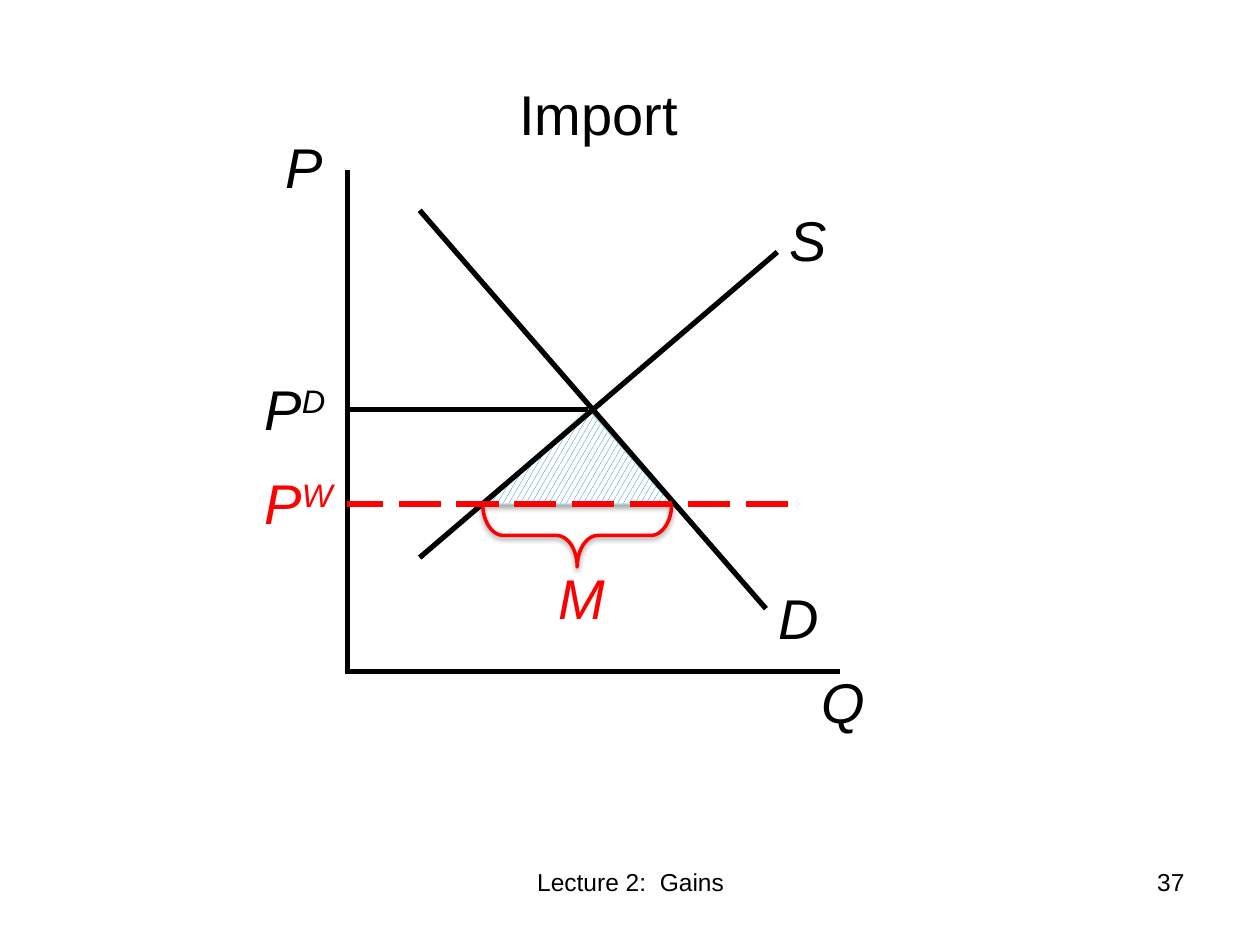
import pptx
import pptx.util
import pptx.dml.color
import pptx.enum.dml
import pptx.enum.shapes
import pptx.enum.text
import pptx.oxml
import pptx.oxml.ns

Cm, Pt = pptx.util.Cm, pptx.util.Pt
SHAPE = pptx.enum.shapes.MSO_SHAPE
ALIGN = pptx.enum.text.PP_ALIGN
BLACK, RED = "000000", "FF0000"
AXIS_X, AXIS_Y = 7, 13.54
P_D, P_W = 8.26, 10.16

TITLE = ("Import", 8.26, 1.47, 7.62)
LINES = [
    (AXIS_X, 3.43, AXIS_X, 13.59, BLACK),
    (8.46, 11.24, 15.67, 5.08, BLACK),
    (AXIS_X, AXIS_Y, 16.94, AXIS_Y, BLACK),
    (8.46, 4.24, 15.44, 12.27, BLACK),
    (AXIS_X, P_D, 11.86, P_D, BLACK),
    (15.88, P_W, AXIS_X, P_W, RED),
]
LABELS = [
    ("S", "", 15.67, 4.01, BLACK),
    ("D", "", 15.44, 11.63, BLACK),
    ("Q", "", 16.31, 13.34, BLACK),
    ("P", "", 5.51, 2.54, BLACK),
    ("P", "D", 5.08, 7.42, BLACK),
    ("P", "W", 5.08, 9.32, RED),
    ("M", "", 11, 11.23, RED),
]
FOOTERS = [
    ("Lecture 2:  Gains", 8.69, 8.05, ALIGN.CENTER),
    ("37", 18.21, 5.92, ALIGN.RIGHT),
]


def paint(color_format, value):
    color_format.rgb = pptx.dml.color.RGBColor.from_string(value)


def place(sp, x, y, w, h):
    sp.left, sp.top, sp.width, sp.height = Cm(x), Cm(y), Cm(w), Cm(h)


def write(sp, text, size, color=BLACK, align=ALIGN.LEFT, italic=False, sup=""):
    tf = sp.text_frame
    tf.word_wrap = True
    tf.auto_size = pptx.enum.text.MSO_AUTO_SIZE.NONE
    tf.vertical_anchor = pptx.enum.text.MSO_ANCHOR.TOP
    tf.text = text
    p = tf.paragraphs[0]
    p.alignment = align
    if sup:
        r = p.add_run()
        r.text = sup
        r.font._element.set("baseline", "30000")
    for r in p.runs:
        r.font.name, r.font.size, r.font.italic = "Arial", Pt(size), italic
        paint(r.font.color, color)


def add_text(x, y, w, h, *args, **kwargs):
    sp = s.shapes.add_textbox(Cm(x), Cm(y), Cm(w), Cm(h))
    write(sp, *args, **kwargs)


def add_line(x1, y1, x2, y2, color):
    line = s.shapes.add_connector(
        pptx.enum.shapes.MSO_CONNECTOR.STRAIGHT, Cm(x1), Cm(y1), Cm(x2), Cm(y2))
    line.line.width = Pt(3)
    paint(line.line.color, color)
    if color == RED:
        line.line.dash_style = pptx.enum.dml.MSO_LINE.LONG_DASH
    line._element.spPr.append(pptx.oxml.parse_xml(
        f'<a:effectLst {pptx.oxml.ns.nsdecls("a")}/>'))


def add_shape(kind, x, y, w, h, adjust, color, width, dist, alpha):
    sp = s.shapes.add_shape(kind, Cm(x), Cm(y), Cm(w), Cm(h))
    sp.adjustments[0] = adjust
    paint(sp.line.color, color)
    sp.line.width = Pt(width)
    sp.shadow.inherit = False
    effects = sp._element.spPr.find(pptx.oxml.ns.qn("a:effectLst"))
    effects.append(pptx.oxml.parse_xml(
        f'<a:outerShdw {pptx.oxml.ns.nsdecls("a")} blurRad="40000" dist="{dist}" '
        f'dir="5400000" rotWithShape="0"><a:srgbClr val="{BLACK}">'
        f'<a:alpha val="{alpha}000"/></a:srgbClr></a:outerShdw>'))
    return sp


prs = pptx.Presentation()
prs.slide_width, prs.slide_height = Cm(25.4), Cm(19.05)
s = prs.slides.add_slide(prs.slide_layouts[5])

text, x, y, w = TITLE
place(s.shapes.title, x, y, w, 1.63)
write(s.shapes.title, text, 32, align=ALIGN.CENTER)

gain = add_shape(SHAPE.ISOSCELES_TRIANGLE, 9.73, P_D, 3.81, P_W - P_D,
                 0.56, "B6DCDF", 0.75, 23000, 35)
gain.fill.patterned()
gain.fill.pattern = pptx.enum.dml.MSO_PATTERN.LARGE_CONFETTI
paint(gain.fill.fore_color, "0070C0")
paint(gain.fill.back_color, "FFFFFF")

for line in LINES:
    add_line(*line)

brace = add_shape(SHAPE.RIGHT_BRACE, 11, 8.89, 1.27, 3.81, 0.33, RED, 2, 20000, 38)
brace.rotation = 90
brace.fill.background()

for text, sup, x, y, color in LABELS:
    add_text(x, y, 5.08, 1.63, text, 32, color, italic=True, sup=sup)
for text, x, w, align in FOOTERS:
    add_text(x, 17.35, w, 1.32, text, 14, align=align)

prs.save("out.pptx")
